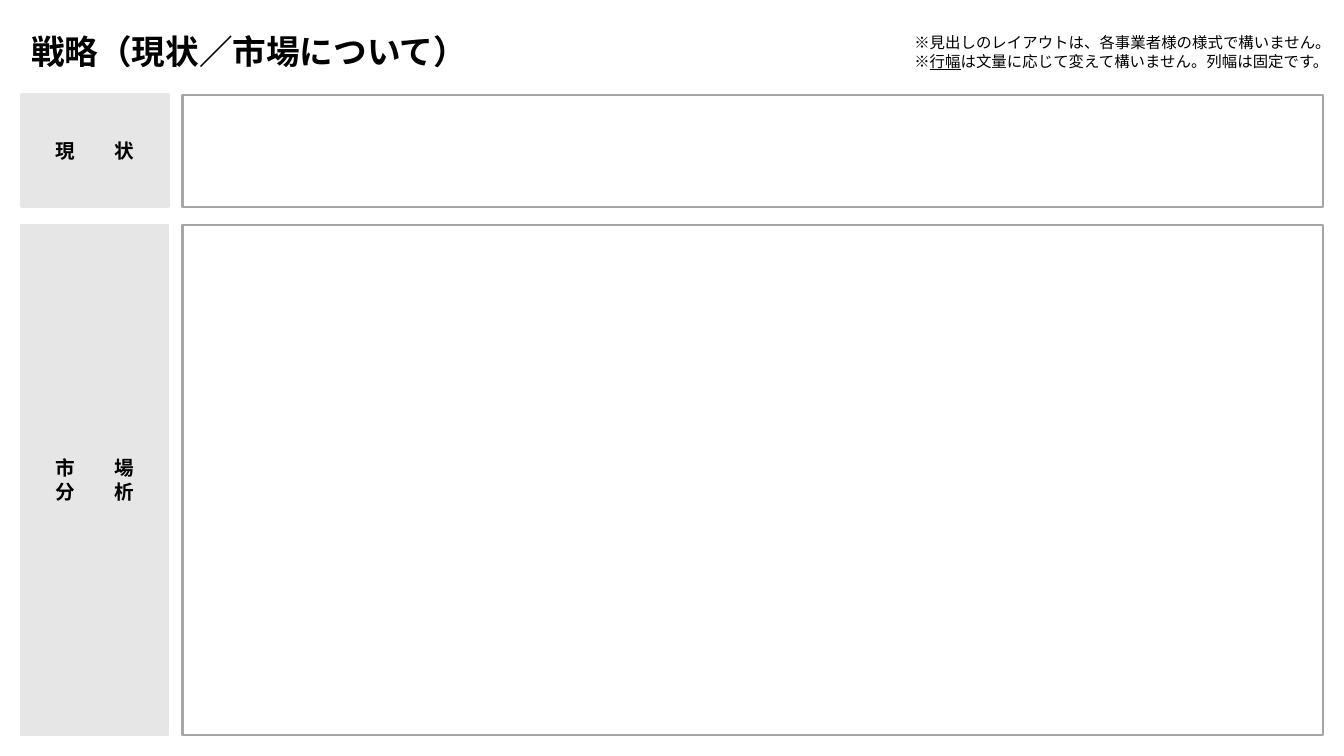
from lxml import etree
from pptx import Presentation
from pptx.dml.color import RGBColor
from pptx.enum.shapes import MSO_SHAPE
from pptx.enum.text import MSO_ANCHOR, MSO_AUTO_SIZE, PP_ALIGN
from pptx.oxml.ns import qn
from pptx.util import Inches, Pt

RECTANGLE = MSO_SHAPE.RECTANGLE
MIDDLE = MSO_ANCHOR.MIDDLE
CENTER = PP_ALIGN.CENTER
FIT_SHAPE = MSO_AUTO_SIZE.SHAPE_TO_FIT_TEXT

FONT = "Noto Sans CJK JP"
COLORS = {"text": "000000", "label": "E7E6E6", "field": "FFFFFF", "border": "A6A6A6"}

LABEL_LEFT, LABEL_WIDTH = 0.21, 1.46
FIELD_LEFT, FIELD_WIDTH = 1.81, 11.31
# Label lines, top, height, label border width
SECTIONS = [
    (["現　　状"], 0.94, 1.11, 2.25),
    (["市　　場", "分　　析"], 2.23, 5.06, 1.5),
]
# Each line is a list of (wording, underlined)
NOTES = [
    [("※見出しのレイアウトは、各事業者様の様式で構いません。", False)],
    [("※", False), ("行幅", True),
     ("は文量に応じて変えて構いません。列幅は固定です。", False)],
]


def color(name):
    return RGBColor.from_string(COLORS[name])


def write_lines(frame, lines, size, bold=False, align=None):
    """Fill a text frame with lines made of (wording, underlined) spans."""
    for index, line in enumerate(lines):
        para = frame.add_paragraph() if index else frame.paragraphs[0]
        para.alignment = align
        for wording, underlined in line:
            span = para.add_run()
            span.text = wording
            span.font.size = Pt(size)
            span.font.bold = bold
            span.font.underline = underlined
            span.font.color.rgb = color("text")
            span.font.name = FONT
            etree.SubElement(span.font._element, qn("a:ea"), typeface=FONT)


def add_text(page, left, top, width, height, lines, size, bold=False, wrap=True):
    box = page.shapes.add_textbox(
        Inches(left), Inches(top), Inches(width), Inches(height))
    box.text_frame.word_wrap = wrap
    box.text_frame.auto_size = FIT_SHAPE
    write_lines(box.text_frame, lines, size, bold)


def add_panel(page, left, top, width, height, fill, border, border_width):
    panel = page.shapes.add_shape(
        RECTANGLE, Inches(left), Inches(top), Inches(width), Inches(height))
    panel.shadow.inherit = False
    panel.fill.solid()
    panel.fill.fore_color.rgb = color(fill)
    panel.line.color.rgb = color(border)
    panel.line.width = Pt(border_width)
    return panel


def add_section(page, label_lines, top, height, label_border):
    """Place a grey heading cell and the empty field beside it."""
    label = add_panel(page, LABEL_LEFT, top, LABEL_WIDTH, height,
                      "label", "label", label_border)
    label.text_frame.vertical_anchor = MIDDLE
    write_lines(label.text_frame, [[(line, False)] for line in label_lines],
                14, bold=True, align=CENTER)
    add_panel(page, FIELD_LEFT, top, FIELD_WIDTH, height, "field", "border", 1.5)


def main():
    deck = Presentation()
    deck.slide_width, deck.slide_height = Inches(13.33), Inches(7.5)
    page = deck.slides.add_slide(deck.slide_layouts[6])
    add_text(page, LABEL_LEFT, 0.26, 11.85, 0.5,
             [[("戦略（現状／市場について）", False)]], 24, bold=True)
    for section in SECTIONS:
        add_section(page, *section)
    add_text(page, 8.97, 0.28, 4.37, 0.47, NOTES, 11, wrap=False)
    deck.save("out.pptx")


if __name__ == "__main__":
    main()
